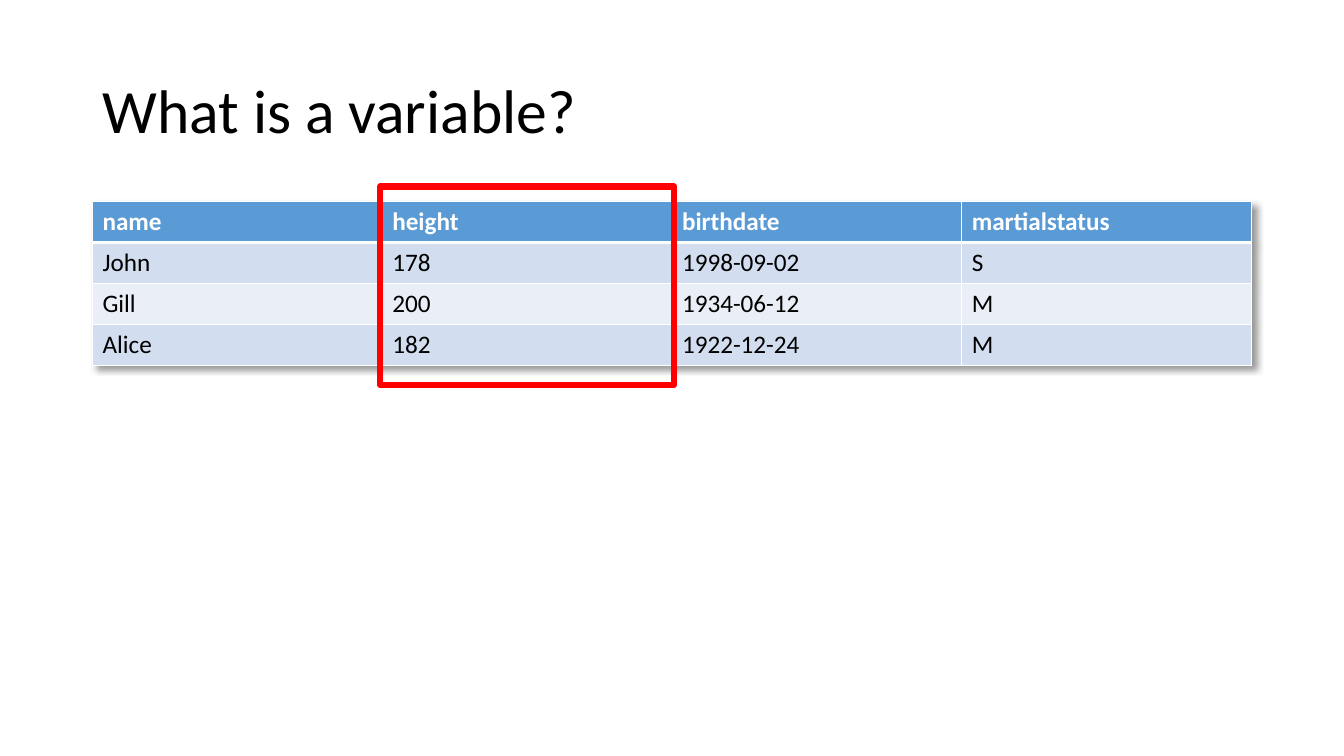
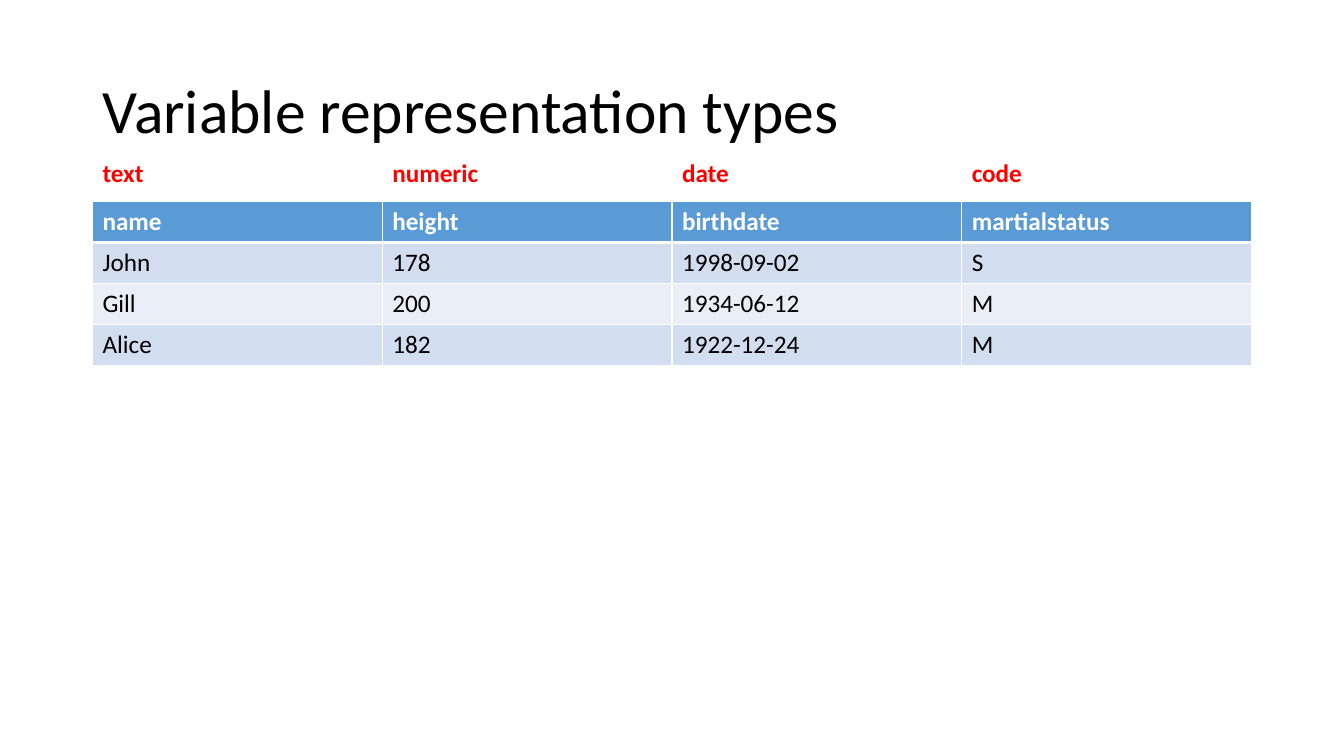
from dataclasses import dataclass
from typing import Sequence

from lxml import etree
from pptx import Presentation
from pptx import util as u
from pptx.dml.color import RGBColor
from pptx.enum import shapes, text
from pptx.oxml import ns

# Shared look
FONT = "Calibri"
WHITE, BLACK, RED = "FFFFFF", "000000", "FF0000"
HEADER_BLUE, BAND_DARK, BAND_LIGHT = "5B9BD5", "D2DEEF", "EAEFF7"
THIN, THICK = 1, 3  # cell borders in points

# Shared grid, in centimetres
LEFT, WIDTH = 2.33, 29.21
TITLE_TOP, TITLE_HEIGHT = 1.01, 3.68
TYPES_TOP, PEOPLE_TOP, ROW_HEIGHT = 3.86, 5.08, 1.03

PEOPLE = (
    ("name", "height", "birthdate", "martialstatus"),
    ("John", "178", "1998-09-02", "S"),
    ("Gill", "200", "1934-06-12", "M"),
    ("Alice", "182", "1922-12-24", "M"),
)
COLUMN_WIDTH = WIDTH / len(PEOPLE[0])
TYPES = ("text", "numeric", "date", "code")


@dataclass(frozen=True)
class RowStyle:
    fill: str | None
    color: str
    bold: bool = False
    top: int = THIN
    bottom: int = THIN


HEADER = RowStyle(HEADER_BLUE, WHITE, bold=True, bottom=THICK)
FIRST_PERSON = RowStyle(BAND_DARK, BLACK, top=THICK)
PEOPLE_STYLES = (HEADER, FIRST_PERSON, RowStyle(BAND_LIGHT, BLACK), RowStyle(BAND_DARK, BLACK))
TYPES_STYLE = RowStyle(None, RED, bold=True, bottom=THICK)


def rgb(code: str) -> RGBColor:
    return RGBColor.from_string(code)


def add_run(paragraph, words: str, size: int, color: str, bold: bool = False) -> None:
    run = paragraph.add_run()
    run.text = words
    run.font.name, run.font.size, run.font.bold = FONT, u.Pt(size), bold
    run.font.color.rgb = rgb(color)


def add_titled_slide(deck, title: str):
    slide = deck.slides.add_slide(deck.slide_layouts.get_by_name("Title Only"))
    heading = slide.shapes.title
    heading.left, heading.top = u.Cm(LEFT), u.Cm(TITLE_TOP)
    heading.width, heading.height = u.Cm(WIDTH), u.Cm(TITLE_HEIGHT)
    heading.text_frame.vertical_anchor = text.MSO_ANCHOR.MIDDLE
    paragraph = heading.text_frame.paragraphs[0]
    paragraph.alignment, paragraph.line_spacing = text.PP_ALIGN.LEFT, 0.9
    add_run(paragraph, title, 44, BLACK)
    return slide


def add_borders(cell, style: RowStyle) -> None:
    properties = cell._tc.get_or_add_tcPr()
    for side, points in (("L", THIN), ("R", THIN), ("T", style.top), ("B", style.bottom)):
        line = etree.SubElement(properties, ns.qn(f"a:ln{side}"), w=str(u.Pt(points)))
        solid = etree.SubElement(line, ns.qn("a:solidFill"))
        etree.SubElement(solid, ns.qn("a:srgbClr"), val=WHITE)


def add_grid(slide, top: float, rows: Sequence[Sequence[str]], styles: Sequence[RowStyle]):
    table = slide.shapes.add_table(
        len(rows), len(rows[0]), u.Cm(LEFT), u.Cm(top), u.Cm(WIDTH), u.Cm(ROW_HEIGHT * len(rows))
    ).table
    for table_row, words, style in zip(table.rows, rows, styles):
        for cell, word in zip(table_row.cells, words):
            add_borders(cell, style)
            if style.fill:
                cell.fill.solid()
                cell.fill.fore_color.rgb = rgb(style.fill)
            else:
                cell.fill.background()
            add_run(cell.text_frame.paragraphs[0], word, 18, style.color, style.bold)
    return table


def add_people(slide):
    return add_grid(slide, PEOPLE_TOP, PEOPLE, PEOPLE_STYLES)


def add_shadow(table) -> None:
    effects = etree.Element(ns.qn("a:effectLst"))
    shadow = etree.SubElement(
        effects, ns.qn("a:outerShdw"), blurRad=str(u.Pt(4)), dist=str(u.Pt(4)),
        dir="2700000", algn="tl", rotWithShape="0",
    )
    black = etree.SubElement(shadow, ns.qn("a:srgbClr"), val=BLACK)
    etree.SubElement(black, ns.qn("a:alpha"), val="40000")
    table._tbl.tblPr.insert(0, effects)


def add_column_frame(slide, column: int) -> None:
    side, above, below = 0.05, 0.38, 0.5  # overhang around the column
    frame = slide.shapes.add_shape(
        shapes.MSO_SHAPE.RECTANGLE,
        u.Cm(LEFT + column * COLUMN_WIDTH - side),
        u.Cm(PEOPLE_TOP - above),
        u.Cm(COLUMN_WIDTH + 2 * side),
        u.Cm(ROW_HEIGHT * len(PEOPLE) + above + below),
    )
    frame.shadow.inherit = False
    frame.fill.background()
    frame.line.color.rgb, frame.line.width = rgb(RED), u.Pt(4.5)


def main() -> None:
    deck = Presentation()
    deck.slide_width, deck.slide_height = u.Cm(33.87), u.Cm(19.05)

    # One column is a variable
    variable = add_titled_slide(deck, "What is a variable?")
    add_shadow(add_people(variable))
    add_column_frame(variable, PEOPLE[0].index("height"))

    # Type above each column
    representation = add_titled_slide(deck, "Variable representation types")
    add_people(representation)
    add_grid(representation, TYPES_TOP, (TYPES,), (TYPES_STYLE,))

    deck.save("out.pptx")


if __name__ == "__main__":
    main()
